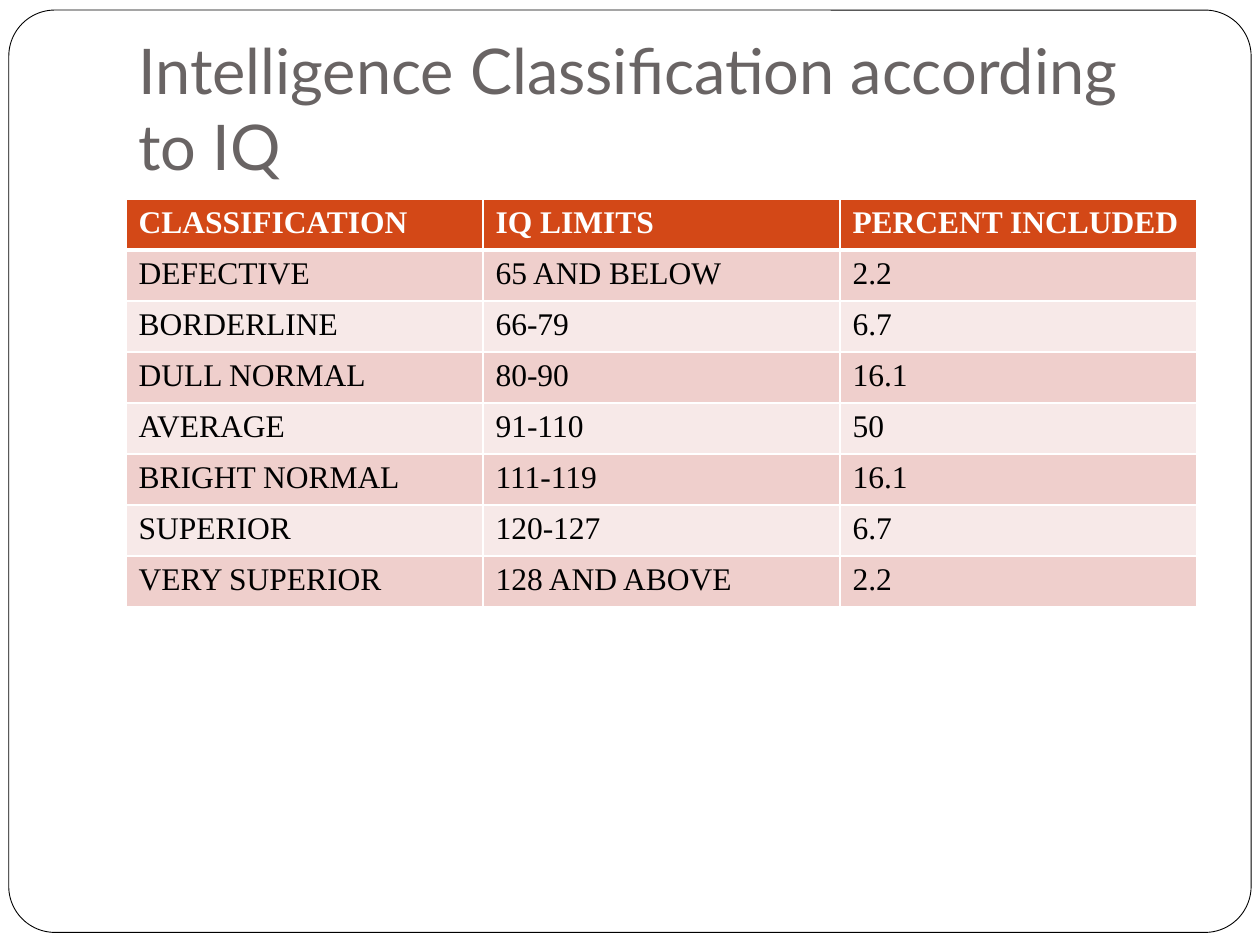
from lxml.etree import SubElement
from pptx import Presentation
from pptx.dml.color import RGBColor
from pptx.enum.shapes import MSO_SHAPE
from pptx.enum.text import MSO_ANCHOR
from pptx.oxml.ns import qn
from pptx.util import Inches, Pt

WHITE = RGBColor(0xFF, 0xFF, 0xFF)
BLACK = RGBColor(0x00, 0x00, 0x00)
GRAY = RGBColor(0x69, 0x64, 0x64)
ORANGE = RGBColor(0xD3, 0x48, 0x17)
ROSE = RGBColor(0xEF, 0xCF, 0xCC)
PALE_ROSE = RGBColor(0xF7, 0xE9, 0xE8)

ROWS = [
    ("CLASSIFICATION", "IQ LIMITS", "PERCENT INCLUDED"),
    ("DEFECTIVE", "65 AND BELOW", "2.2"),
    ("BORDERLINE", "66-79", "6.7"),
    ("DULL NORMAL", "80-90", "16.1"),
    ("AVERAGE", "91-110", "50"),
    ("BRIGHT NORMAL", "111-119", "16.1"),
    ("SUPERIOR", "120-127", "6.7"),
    ("VERY SUPERIOR", "128 AND ABOVE", "2.2"),
]


def add_span(para, text, font, size, color, bold=False):
    span = para.add_run()
    span.text = text
    span.font.name = font
    span.font.size = Pt(size)
    span.font.color.rgb = color
    span.font.bold = bold


def add_border(cell, side, width):
    line = SubElement(cell._tc.get_or_add_tcPr(), qn(f"a:ln{side}"), w=str(Pt(width)))
    fill = SubElement(line, qn("a:solidFill"))
    SubElement(fill, qn("a:srgbClr"), val=str(WHITE))


deck = Presentation()
deck.slide_width = Inches(10)
deck.slide_height = Inches(7.5)
page = deck.slides.add_slide(deck.slide_layouts[6])

frame = page.shapes.add_shape(
    MSO_SHAPE.ROUNDED_RECTANGLE, Inches(0.07), Inches(0.08), Inches(9.86), Inches(7.32)
)
frame.adjustments[0] = 0.05
frame.shadow.inherit = False
frame.fill.solid()
frame.fill.fore_color.rgb = WHITE
frame.line.color.rgb = BLACK
frame.line.width = Pt(0.5)

title_box = page.shapes.add_textbox(Inches(1), Inches(0.3), Inches(8.5), Inches(1.25))
title = title_box.text_frame
title.word_wrap = True
title.vertical_anchor = MSO_ANCHOR.BOTTOM
title.margin_bottom = Inches(0.1)
add_span(title.paragraphs[0], "Intelligence Classification according to IQ", "Lato", 36, GRAY)

table = page.shapes.add_table(
    len(ROWS), len(ROWS[0]), Inches(1), Inches(1.58), Inches(8.5), Inches(3.24)
).table

for row, texts in enumerate(ROWS):
    header = row == 0
    for column, text in enumerate(texts):
        cell = table.cell(row, column)
        top = 3 if row == 1 else 1
        bottom = 3 if header else 1
        for side, width in (("L", 1), ("R", 1), ("T", top), ("B", bottom)):
            add_border(cell, side, width)
        cell.fill.solid()
        cell.fill.fore_color.rgb = ORANGE if header else ROSE if row % 2 else PALE_ROSE
        add_span(
            cell.text_frame.paragraphs[0], text, "Times New Roman", 18,
            WHITE if header else BLACK, header,
        )

deck.save("out.pptx")
